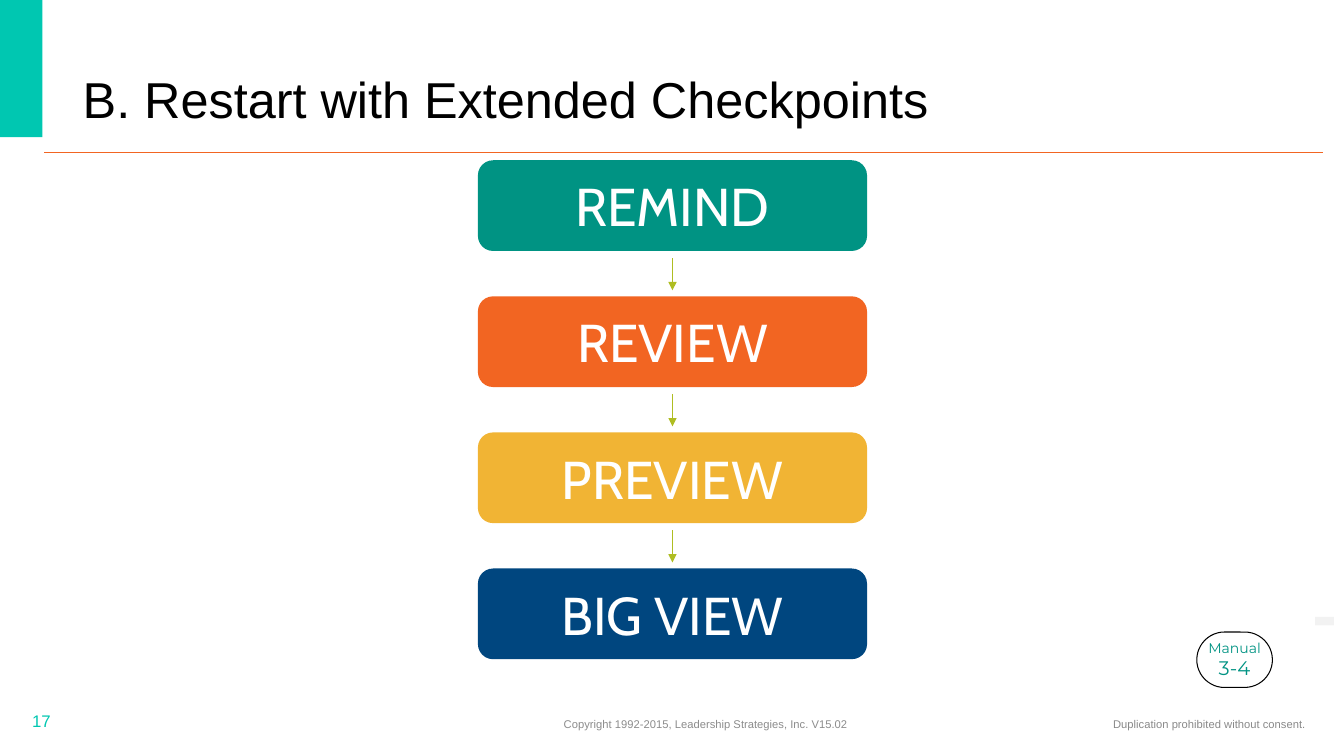
from pptx import Presentation
from pptx.dml.color import RGBColor
from pptx.enum.shapes import MSO_CONNECTOR, MSO_SHAPE
from pptx.enum.text import MSO_ANCHOR, PP_ALIGN
from pptx.oxml.ns import qn
from pptx.util import Inches, Pt
from lxml.etree import SubElement

STEPS = [
    ("REMIND", "009383"),
    ("REVIEW", "F26522"),
    ("PREVIEW", "F1B434"),
    ("BIG VIEW", "00467F"),
]


def tint(color, code):
    """Set a color format from a hex string."""
    color.rgb = RGBColor.from_string(code)


def style(font, name, code, size=None, bold=None):
    """Set the face, color, size and weight of a font."""
    font.name = name
    font.bold = bold
    tint(font.color, code)
    if size:
        font.size = Pt(size)


def block(slide, kind, box, fill):
    """Add a filled preset shape without line or shadow."""
    shape = slide.shapes.add_shape(kind, *map(Inches, box))
    shape.shadow.inherit = False
    shape.fill.solid()
    tint(shape.fill.fore_color, fill)
    shape.line.fill.background()
    return shape


def rule(slide, start, end, code, width, arrow=False):
    """Add a straight line, with an arrowhead if asked."""
    line = slide.shapes.add_connector(
        MSO_CONNECTOR.STRAIGHT, *map(Inches, (*start, *end)))
    tint(line.line.color, code)
    line.line.width = Pt(width)
    SubElement(line._element.spPr, qn("a:effectLst"))
    if arrow:
        SubElement(line.line._get_or_add_ln(), qn("a:tailEnd"), type="triangle")


def label(slide, box, text, size, code, align=PP_ALIGN.LEFT,
          anchor=MSO_ANCHOR.MIDDLE, face="Arial", bold=None, wrap=True):
    """Add a text box holding one paragraph."""
    frame = slide.shapes.add_textbox(*map(Inches, box)).text_frame
    frame.word_wrap = wrap
    frame.vertical_anchor = anchor
    para = frame.paragraphs[0]
    para.text = text
    para.alignment = align
    style(para.font, face, code, size, bold)


def header(slide, box):
    """Place the corner block, the rule and the title."""
    left, top, width, height = box
    block(slide, MSO_SHAPE.RECTANGLE, (left - 0.02, top - 0.02, 0.44, 1.38), "00C7B1")
    base = top + height
    rule(slide, (left + 0.44, base), (left + width, base), "F26522", 0.5)
    title = slide.shapes.title
    title.left, title.top = Inches(left + 0.72), Inches(top + 0.57)
    title.width, title.height = Inches(8.79), Inches(0.76)
    title.text_frame.vertical_anchor = MSO_ANCHOR.BOTTOM
    para = title.text_frame.paragraphs[0]
    para.text = "B. Restart with Extended Checkpoints"
    para.alignment = PP_ALIGN.LEFT
    para.line_spacing = 0.9
    style(para.font, "Arial", "000000", 36)


def flow(slide, box):
    """Stack the steps in the box with arrows between them."""
    left, top, width, height = box
    tall = 0.9
    pitch = (height - tall) / (len(STEPS) - 1)
    mid = left + width / 2
    for i, (text, code) in enumerate(STEPS):
        y = top + i * pitch
        step = block(slide, MSO_SHAPE.ROUNDED_RECTANGLE, (left, y, width, tall), code)
        step.text_frame.vertical_anchor = MSO_ANCHOR.MIDDLE
        para = step.text_frame.paragraphs[0]
        para.text = text
        para.alignment = PP_ALIGN.CENTER
        style(para.font, "Cabin", "FFFFFF", 38)
        if i:
            rule(slide, (mid, y - 0.38), (mid, y - 0.06), "AFBD22", 1, True)


def badge(slide, box):
    """Add the pill with the manual page and the dash beside it."""
    left, top = box[:2]
    pill = block(slide, MSO_SHAPE.ROUNDED_RECTANGLE, box, "FFFFFF")
    pill.adjustments[0] = 0.5
    tint(pill.line.color, "000000")
    pill.line.width = Pt(0.75)
    frame = pill.text_frame
    frame.word_wrap = False
    frame.vertical_anchor = MSO_ANCHOR.MIDDLE
    para = frame.paragraphs[0]
    para.alignment = PP_ALIGN.CENTER
    style(para.font, "Montserrat", "009383")
    for i, (text, size) in enumerate((("Manual", 10), ("3-4", 14))):
        if i:
            para.add_line_break()
        run = para.add_run()
        run.text = text
        style(run.font, "Montserrat", "009383", size)
    label(slide, (left + 1.04, top - 0.63, 0.43, 0.91), "-", 48, "F2F2F2",
          anchor=MSO_ANCHOR.TOP, face="Montserrat", bold=True, wrap=False)


def footer(slide, box):
    """Place the page number, copyright and notice."""
    left, top, width, height = box
    label(slide, (left, top - 0.03, 3, height), "17", 12, "00C7B1")
    label(slide, (left + 3.4, top, 6.76, height),
          "Copyright 1992-2015, Leadership Strategies, Inc. V15.02",
          8, "8C8C8C", PP_ALIGN.CENTER)
    label(slide, (left + width - 5.63, top, 5.63, height),
          "Duplication prohibited without consent.", 8, "898989", PP_ALIGN.RIGHT)


def main():
    """Build the slide and save it."""
    deck = Presentation()
    deck.slide_width, deck.slide_height = Inches(13.33), Inches(7.5)
    slide = deck.slides.add_slide(deck.slide_layouts[5])
    header(slide, (0, 0, 13.12, 1.51))
    flow(slide, (4.74, 1.59, 3.86, 4.95))
    badge(slide, (11.87, 6.27, 0.75, 0.55))
    footer(slide, (0.22, 6.98, 12.83, 0.4))
    deck.save("out.pptx")


if __name__ == "__main__":
    main()
